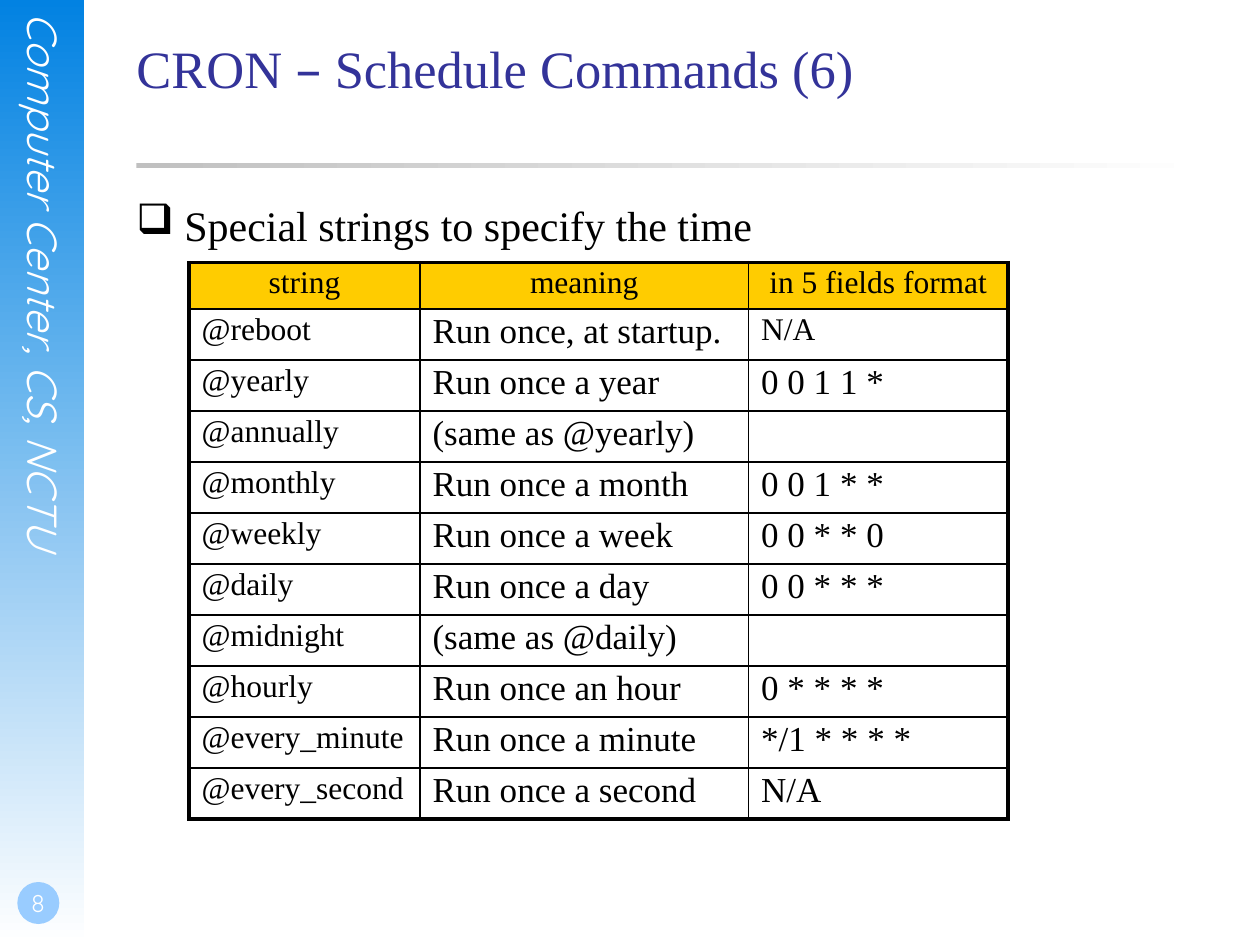
from lxml.etree import SubElement
from pptx import Presentation
from pptx.dml.color import RGBColor
from pptx.enum.shapes import MSO_SHAPE
from pptx.enum.text import MSO_ANCHOR, PP_ALIGN
from pptx.oxml import parse_xml
from pptx.oxml.ns import nsdecls, qn
from pptx.util import Inches, Pt

BLUE = RGBColor(0x02, 0x82, 0xE2)
LIGHT_BLUE = RGBColor(0x99, 0xCC, 0xFF)
NAVY = RGBColor(0x33, 0x33, 0x99)
GOLD = RGBColor(0xFF, 0xCC, 0x00)
GRAY = RGBColor(0xC0, 0xC0, 0xC0)
BLACK = RGBColor(0, 0, 0)
WHITE = RGBColor(0xFF, 0xFF, 0xFF)

UNIT = Inches(1) / 12  # grid step: the slide is 120 columns by 90 rows
SERIF, SANS = "Times New Roman", "Quicksand"
MARGIN, CONTENT_WIDTH = 13, 102
THIN, THICK = Pt(1), Pt(2.25)

ROWS = [
    ("string", "meaning", "in 5 fields format"),
    ("@reboot", "Run once, at startup.", "N/A"),
    ("@yearly", "Run once a year", "0 0 1 1 *"),
    ("@annually", "(same as @yearly)", ""),
    ("@monthly", "Run once a month", "0 0 1 * *"),
    ("@weekly", "Run once a week", "0 0 * * 0"),
    ("@daily", "Run once a day", "0 0 * * *"),
    ("@midnight", "(same as @daily)", ""),
    ("@hourly", "Run once an hour", "0 * * * *"),
    ("@every_minute", "Run once a minute", "*/1 * * * *"),
    ("@every_second", "Run once a second", "N/A"),
]
COLUMN_WIDTHS = [22, 31.3, 24.7]
HEADER_HEIGHT, ROW_HEIGHT = 4.4, 4.86

presentation = Presentation()
presentation.slide_width, presentation.slide_height = Inches(10), Inches(7.5)
slide = presentation.slides.add_slide(presentation.slide_layouts[6])


def grid(*steps):
    return [round(step * UNIT) for step in steps]


def add_text(box, texts, size, font, color):
    """Add a text box without insets; texts are the runs of its one paragraph."""
    frame = slide.shapes.add_textbox(*grid(*box)).text_frame
    frame.word_wrap = True
    frame.margin_left = frame.margin_top = frame.margin_right = frame.margin_bottom = 0
    for text in texts:
        run = frame.paragraphs[0].add_run()
        run.text = text
        run.font.size, run.font.name = Pt(size), font
        run.font.color.rgb = color
    return frame


# Sidebar, page badge and title rule
for preset, box, color, angle in [
    (MSO_SHAPE.RECTANGLE, (0, 0, 8, 90), BLUE, 270),
    (MSO_SHAPE.OVAL, (1.65, 84, 4, 4), LIGHT_BLUE, None),
    (MSO_SHAPE.RECTANGLE, (MARGIN, 15.5, CONTENT_WIDTH, 0.5), GRAY, 0),
]:
    shape = slide.shapes.add_shape(preset, *grid(*box))
    shape.shadow.inherit = False
    shape.line.fill.background()
    if angle is None:
        shape.fill.solid()
        shape.fill.fore_color.rgb = color
    else:
        shape.fill.gradient()
        shape.fill.gradient_angle = angle
        for stop, stop_color in zip(shape.fill.gradient_stops, (color, WHITE)):
            stop.color.rgb = stop_color

sidebar = add_text((1.8, 1.2, 4.8, 61.3), ["Computer Center, CS, NCTU"], 24, SANS, WHITE)
sidebar.paragraphs[0].runs[0].font.italic = True
sidebar._txBody.bodyPr.set("vert", "eaVert")

page_number = add_text((0, 82, 7, 6), ["8"], 14, SANS, WHITE)
page_number.margin_left, page_number.margin_bottom = Inches(0.02), Inches(0.05)
page_number.vertical_anchor = MSO_ANCHOR.BOTTOM
page_number.paragraphs[0].alignment = PP_ALIGN.CENTER

title = add_text((MARGIN, 3.4, CONTENT_WIDTH, 15),
                 ["CRON ", "–", " Schedule Commands (6)"], 30, SERIF, NAVY)
title.paragraphs[0].runs[1].font.name = "DejaVu Sans"

body = add_text((MARGIN, 19, CONTENT_WIDTH, 61),
                ["Special strings to specify the time"], 24, SERIF, BLACK)
body.paragraphs[0].space_before = Pt(6)
properties = body.paragraphs[0]._p.get_or_add_pPr()
properties.set("marL", str(Inches(0.38)))
properties.set("indent", str(-Inches(0.38)))
SubElement(properties, qn("a:buChar")).set("char", "❑")

# Table of special strings
last_row, last_column = len(ROWS) - 1, len(COLUMN_WIDTHS) - 1
table_height = HEADER_HEIGHT + last_row * ROW_HEIGHT
table = slide.shapes.add_table(len(ROWS), len(COLUMN_WIDTHS),
                               *grid(18, 25, sum(COLUMN_WIDTHS), table_height)).table
table.first_row = table.horz_banding = False
for column, width in zip(table.columns, grid(*COLUMN_WIDTHS)):
    column.width = width
for row, height in zip(table.rows, grid(HEADER_HEIGHT, *[ROW_HEIGHT] * last_row)):
    row.height = height

for r, texts in enumerate(ROWS):
    for c, text in enumerate(texts):
        cell = table.cell(r, c)
        if r == 0:
            cell.fill.solid()
            cell.fill.fore_color.rgb = GOLD
        else:
            cell.fill.background()
        edges = {"lnL": c == 0, "lnR": c == last_column,
                 "lnT": r == 0, "lnB": r == last_row}
        for position, (tag, is_outer) in enumerate(edges.items()):
            border = parse_xml(
                f'<a:{tag} {nsdecls("a")} w="{THICK if is_outer else THIN}">'
                f'<a:solidFill><a:srgbClr val="{BLACK}"/></a:solidFill></a:{tag}>')
            cell._tc.get_or_add_tcPr().insert(position, border)
        if not text:
            continue
        paragraph = cell.text_frame.paragraphs[0]
        paragraph.text = text
        paragraph.line_spacing = 0.9
        if r == 0:
            paragraph.alignment = PP_ALIGN.CENTER
        font = paragraph.runs[0].font
        is_small = r == 0 or c == 0 or (r, c) == (1, 2)
        font.size, font.name = Pt(18 if is_small else 20), SERIF
        font.color.rgb = BLACK

presentation.save("out.pptx")
